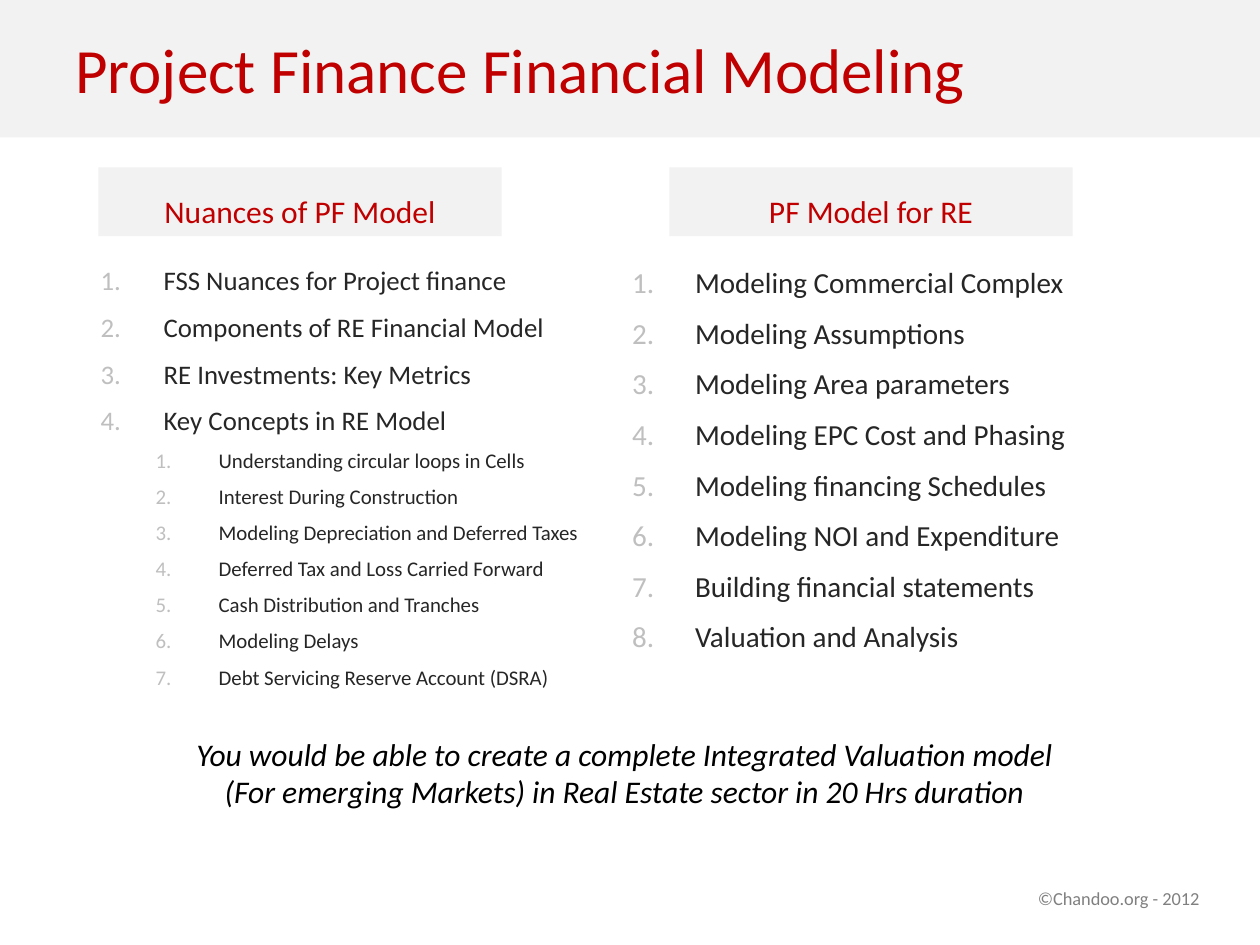
import pptx
import pptx.dml.color
import pptx.enum.shapes
import pptx.enum.text
import pptx.oxml
import pptx.oxml.ns
import pptx.util
from lxml import etree

Pt = pptx.util.Pt
RGB = pptx.dml.color.RGBColor.from_string
ALIGN = pptx.enum.text.PP_ALIGN
ANCHOR = pptx.enum.text.MSO_ANCHOR
RECT = pptx.enum.shapes.MSO_SHAPE.RECTANGLE
qn = pptx.oxml.ns.qn

theme = {
    "font": "Calibri",
    "panel": "F2F2F2",
    "red": "C00000",
    "body": "262626",
    "black": "000000",
    "gray": "808080",
    "number": "BFBFBF",
    "title": 36,
    "head": 18,
    "left": 15.3,
    "sub": 11.9,
    "right": 16.6,
    "foot": 10.5,
}

deck = pptx.Presentation()
deck.slide_width, deck.slide_height = Pt(720), Pt(540)
slide = deck.slides.add_slide(deck.slide_layouts[6])


def add_panel(x, y, w, h):
    panel = slide.shapes.add_shape(RECT, Pt(x), Pt(y), Pt(w), Pt(h))
    panel.shadow.inherit = False
    panel.fill.solid()
    panel.fill.fore_color.rgb = RGB(theme["panel"])
    panel.line.fill.background()
    return panel


def add_run(para, text, size, color):
    run = para.add_run()
    run.text = text
    run.font.name = theme["font"]
    run.font.size = Pt(theme[size])
    run.font.color.rgb = RGB(theme[color])
    return run


add_panel(0, 0, 720, 78.5)

title = slide.shapes.add_textbox(Pt(36), Pt(0), Pt(648), Pt(78.5)).text_frame
title.word_wrap = True
title.vertical_anchor = ANCHOR.MIDDLE
add_run(title.paragraphs[0], "Project Finance Financial Modeling", "title", "red")

foot = slide.shapes.add_textbox(Pt(586), Pt(503.5), Pt(108.6), Pt(20)).text_frame
foot.word_wrap = False
add_run(foot.paragraphs[0], "©Chandoo.org - 2012", "foot", "gray")

topics = [
    "FSS Nuances for Project finance",
    "Components of RE Financial Model",
    "RE Investments: Key Metrics",
    "Key Concepts in RE Model",
]
details = [
    "Understanding circular loops in Cells",
    "Interest During Construction",
    "Modeling Depreciation and Deferred Taxes",
    "Deferred Tax and Loss Carried Forward",
    "Cash Distribution and Tranches",
    "Modeling Delays",
    "Debt Servicing Reserve Account (DSRA)",
]
steps = [
    "Modeling Commercial Complex",
    "Modeling Assumptions",
    "Modeling Area parameters",
    "Modeling EPC Cost and Phasing",
    "Modeling financing Schedules",
    "Modeling NOI and Expenditure",
    "Building financial statements",
    "Valuation and Analysis",
]
columns = [
    (50.4, 268.5, [(text, 0, "left") for text in topics]
     + [(text, 1, "sub") for text in details]),
    (354.2, 256.5, [(text, 0, "right") for text in steps]),
]

for x, height, items in columns:
    frame = slide.shapes.add_textbox(Pt(x), Pt(141.8), Pt(307.5), Pt(height)).text_frame
    frame.word_wrap = True
    for index, (text, level, size) in enumerate(items):
        para = frame.add_paragraph() if index else frame.paragraphs[0]
        para.level = level
        props = para._p.get_or_add_pPr()
        props.set("marL", str(Pt(36 + 31.5 * level)))
        props.set("indent", str(Pt(-36)))
        tint = etree.SubElement(props, qn("a:buClr"))
        etree.SubElement(tint, qn("a:srgbClr")).set("val", theme["number"])
        etree.SubElement(props, qn("a:buFont")).set("typeface", "+mj-lt")
        etree.SubElement(props, qn("a:buAutoNum")).set("type", "arabicPeriod")
        para.line_spacing = 1.3
        if index:
            para.space_before = Pt(round(theme[size] * 0.18, 1))
        add_run(para, text, size, "body")

closing = slide.shapes.add_textbox(Pt(62), Pt(416.2), Pt(590), Pt(51)).text_frame
closing.word_wrap = True
para = closing.paragraphs[0]
para.alignment = ALIGN.CENTER
lines = [
    "You would be able to create a complete Integrated Valuation model",
    "(For emerging Markets) in Real Estate sector in 20 Hrs duration",
]
for index, text in enumerate(lines):
    if index:
        para.add_line_break()
    add_run(para, text, "head", "black").font.italic = True

for x, text in [(56.2, "Nuances of PF Model"), (382.5, "PF Model for RE")]:
    frame = add_panel(x, 95.6, 230.5, 39.4).text_frame
    frame.vertical_anchor = ANCHOR.MIDDLE
    para = frame.paragraphs[0]
    para.alignment = ALIGN.CENTER
    para.line_spacing = 1.5
    add_run(para, text, "head", "red")

deck.save("out.pptx")
